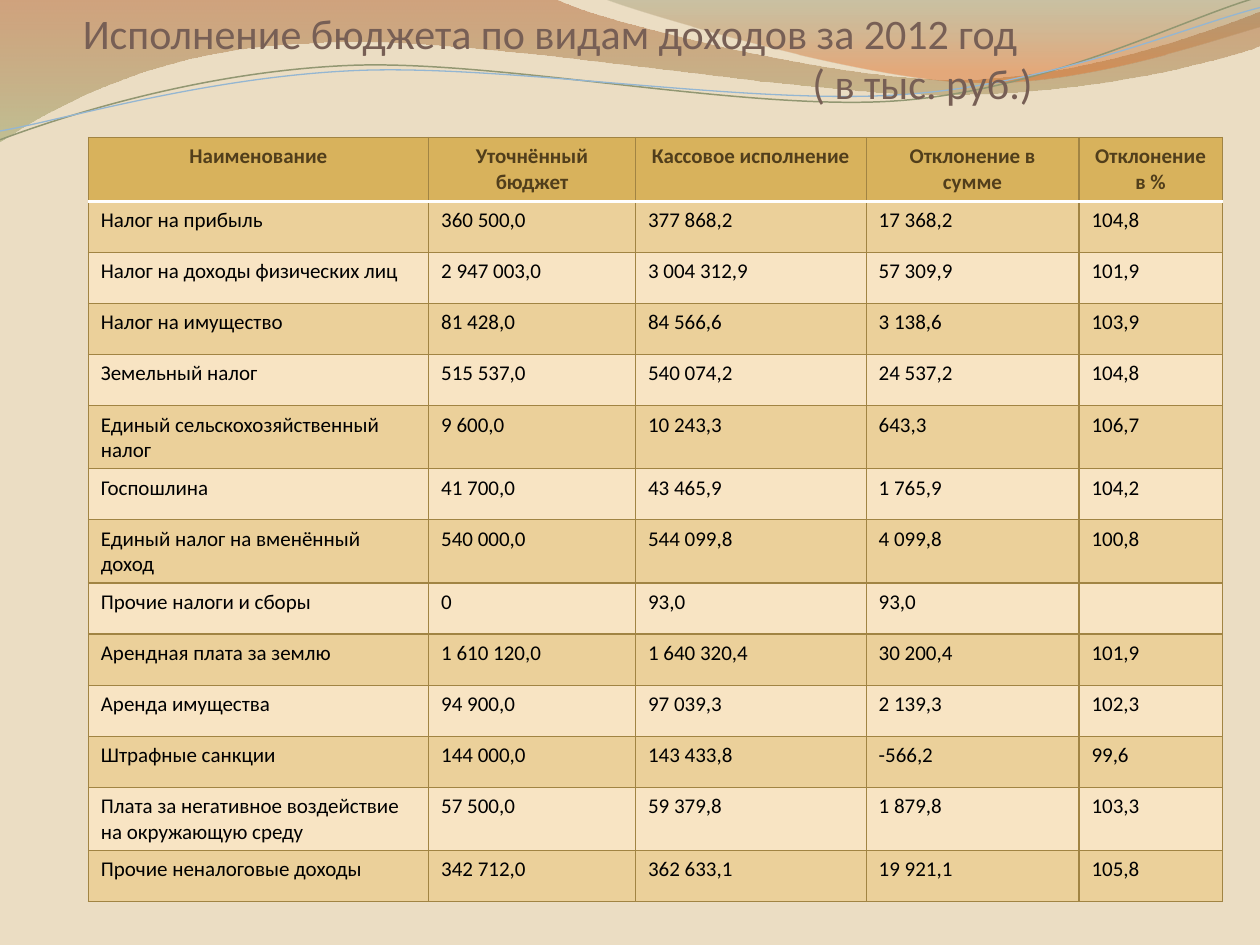
from lxml import etree
from pptx import Presentation
from pptx import util as u
from pptx.dml.color import RGBColor
from pptx.enum import text
from pptx.oxml.ns import qn

SAND = RGBColor(0xEB, 0xDD, 0xC3)
RUST = RGBColor(0xAF, 0x5C, 0x29)
SAGE = RGBColor(0x9D, 0xA6, 0x6B)
MOSS = RGBColor(0x7D, 0x83, 0x5B)
ORANGE = RGBColor(0xDD, 0x6B, 0x24)
OLIVE = RGBColor(0x92, 0x97, 0x72)
BLUE = RGBColor(0x94, 0xB6, 0xD2)
TAUPE = RGBColor(0x77, 0x5F, 0x55)
GOLD = RGBColor(0xD8, 0xB2, 0x5C)
DARK_BAND = RGBColor(0xEB, 0xD0, 0x9A)
LIGHT_BAND = RGBColor(0xF8, 0xE4, 0xC3)
BRONZE = RGBColor(0xA1, 0x84, 0x43)
BROWN = RGBColor(0x51, 0x3E, 0x1B)
WHITE = RGBColor(0xFF, 0xFF, 0xFF)
BLACK = RGBColor(0, 0, 0)

FONT = "Calibri"
COLUMNS = [6.86, 4.17, 4.65, 4.29, 2.89]
HEADER = ["Наименование", "Уточнённый бюджет", "Кассовое исполнение",
          "Отклонение в сумме", "Отклонение в %"]
ROWS = [
    ["Налог на прибыль", "360 500,0", "377 868,2", "17 368,2", "104,8"],
    ["Налог на доходы физических лиц", "2 947 003,0", "3 004 312,9", "57 309,9", "101,9"],
    ["Налог на имущество", "81 428,0", "84 566,6", "3 138,6", "103,9"],
    ["Земельный налог", "515 537,0", "540 074,2", "24 537,2", "104,8"],
    ["Единый сельскохозяйственный налог", "9 600,0", "10 243,3", "643,3", "106,7"],
    ["Госпошлина", "41 700,0", "43 465,9", "1 765,9", "104,2"],
    ["Единый налог на вменённый доход", "540 000,0", "544 099,8", "4 099,8", "100,8"],
    ["Прочие налоги и сборы", "0", "93,0", "93,0", ""],
    ["Арендная плата за землю", "1 610 120,0", "1 640 320,4", "30 200,4", "101,9"],
    ["Аренда имущества", "94 900,0", "97 039,3", "2 139,3", "102,3"],
    ["Штрафные санкции", "144 000,0", "143 433,8", "-566,2", "99,6"],
    ["Плата за негативное воздействие на окружающую среду",
     "57 500,0", "59 379,8", "1 879,8", "103,3"],
    ["Прочие неналоговые доходы", "342 712,0", "362 633,1", "19 921,1", "105,8"],
]

BACK_WAVE = [(0, 0), (440, -1), (476, 17, 664, 63, 758, 63), (853, 63, 958, 26, 1000, 9),
             (1001, 36), (983, 44, 870, 76, 746, 75), (622, 75, 382, 28, 257, 34),
             (129, 36, 46, 83, -1, 113), (0, 0)]
FRONT_WAVE = [(479, -1), (509, 11, 682, 62, 769, 65), (856, 69, 961, 32, 1000, 21),
              (1000, 0), (479, -1)]
OLIVE_CURVE = [(0, 111), (48, 93, 158, 57, 277, 52), (395, 47, 593, 89, 713, 80),
               (833, 71, 938, 15, 998, -2)]
BLUE_CURVE = [(0, 104), (47, 96, 164, 61, 283, 56), (403, 51, 597, 84, 717, 75),
              (836, 67, 941, 21, 1000, 6)]


def write(p, words, size=12, color=BLACK, bold=False, align=text.PP_ALIGN.LEFT):
    p.alignment = align
    r = p.add_run()
    r.text = words
    r.font.name, r.font.size, r.font.bold = FONT, u.Pt(size), bold
    r.font.color.rgb = color


def add_curve(slide, box, segments, closed=False):
    left, top, width = box
    points = [seg[i:i + 2] for seg in segments for i in range(0, len(seg), 2)]
    builder = slide.shapes.build_freeform(*points[0], scale=width / 1000)
    builder.add_line_segments(points[1:], close=closed)
    sp = builder.convert_to_shape(left, top)
    sp.shadow.inherit = False
    steps = iter(list(sp.element.iter(qn("a:lnTo"))))
    for seg in segments[1:]:
        nodes = [next(steps) for _ in range(len(seg) // 2)]
        if len(nodes) == 3:
            nodes[0].tag = qn("a:cubicBezTo")
            for node in nodes[1:]:
                nodes[0].append(node[0])
                node.getparent().remove(node)
    return sp


def add_waves(slide, box):
    for segments, stops in (
        (BACK_WAVE, [(0, RUST, 45), (1, SAGE, 55)]),
        (FRONT_WAVE, [(0, MOSS, 30), (0.8, ORANGE, 45)]),
    ):
        sp = add_curve(slide, box, segments, closed=True)
        sp.line.fill.background()
        sp.fill.gradient()
        sp.fill.gradient_angle = 270
        for stop, (position, color, _) in zip(sp.fill.gradient_stops, stops):
            stop.position, stop.color.rgb = position, color
        colors = sp.element.spPr.find(qn("a:gradFill")).iter(qn("a:srgbClr"))
        for node, (_, _, alpha) in zip(colors, stops):
            etree.SubElement(node, qn("a:alpha"), val=str(alpha * 1000))
    for segments, color, weight in ((OLIVE_CURVE, OLIVE, 0.85), (BLUE_CURVE, BLUE, 0.75)):
        sp = add_curve(slide, box, segments)
        sp.fill.background()
        sp.line.color.rgb, sp.line.width = color, u.Pt(weight)


def add_title(slide, box):
    tf = slide.shapes.add_textbox(*box).text_frame
    tf.word_wrap = True
    tf.vertical_anchor = text.MSO_ANCHOR.BOTTOM
    tf.margin_left, tf.margin_right = u.Cm(0.1), u.Cm(3.2)
    tf.margin_top, tf.margin_bottom = u.Cm(0.13), 0
    write(tf.paragraphs[0], "Исполнение бюджета по видам доходов за 2012 год",
          size=24, color=TAUPE)
    write(tf.add_paragraph(), "( в тыс. руб.)", size=24, color=TAUPE,
          align=text.PP_ALIGN.RIGHT)


def set_borders(cell, top, bottom):
    tcPr = cell._tc.get_or_add_tcPr()
    side = (BRONZE, 0.75)
    edges = (("L", side), ("R", side), ("T", top), ("B", bottom))
    for i, (name, (color, weight)) in enumerate(edges):
        ln = etree.Element(qn("a:ln" + name), w=str(u.Pt(weight)))
        fill = etree.SubElement(ln, qn("a:solidFill"))
        etree.SubElement(fill, qn("a:srgbClr"), val=str(color))
        tcPr.insert(i, ln)


def add_budget_table(slide, box):
    table = slide.shapes.add_table(len(ROWS) + 1, len(COLUMNS), *box).table
    table.horz_banding = False
    for column, width in zip(table.columns, COLUMNS):
        column.width = u.Cm(width)
    thin, rule = (BRONZE, 0.75), (WHITE, 2)
    for i, values in enumerate([HEADER] + ROWS):
        table.rows[i].height = u.Cm(1.03 if i else 1.29)
        band = (DARK_BAND if i % 2 else LIGHT_BAND) if i else GOLD
        style = {} if i else dict(color=BROWN, bold=True, align=text.PP_ALIGN.CENTER)
        for cell, value in zip(table.rows[i].cells, values):
            cell.fill.solid()
            cell.fill.fore_color.rgb = band
            set_borders(cell, rule if i == 1 else thin, rule if i == 0 else thin)
            if value:
                write(cell.text_frame.paragraphs[0], value, **style)


def main():
    prs = Presentation()
    prs.slide_width, prs.slide_height = u.Cm(25.4), u.Cm(19.05)
    slide = prs.slides.add_slide(prs.slide_layouts[6])
    slide.background.fill.solid()
    slide.background.fill.fore_color.rgb = SAND
    add_waves(slide, (0, 0, prs.slide_width))
    add_title(slide, (u.Cm(1.57), 0, u.Cm(22.45), u.Cm(2.18)))
    add_budget_table(slide, (u.Cm(1.78), u.Cm(2.77), u.Cm(22.86), u.Cm(15.4)))
    prs.save("out.pptx")


if __name__ == "__main__":
    main()
